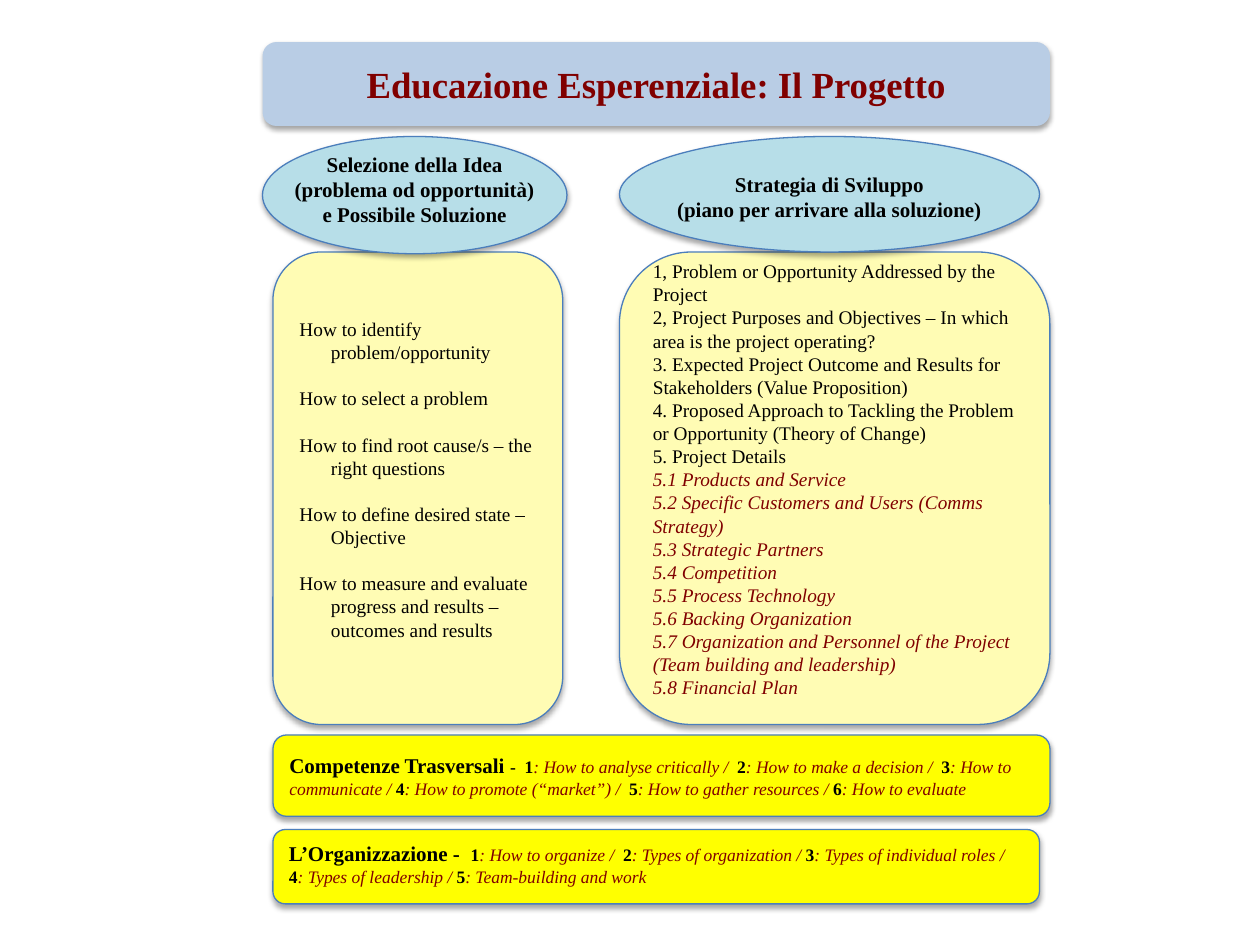
from lxml.etree import SubElement
from pptx import Presentation
from pptx.dml.color import RGBColor
from pptx.enum.shapes import MSO_SHAPE
from pptx.enum.text import MSO_ANCHOR, PP_ALIGN
from pptx.oxml.ns import qn
from pptx.util import Pt

FONT = "Times New Roman"
BLACK = RGBColor(0, 0, 0)
MAROON = RGBColor(0x80, 0, 0)
BLUE = RGBColor(0x4B, 0x7E, 0xBC)
PALE = RGBColor(0xB9, 0xCD, 0xE5)
AQUA = RGBColor(0xB7, 0xDE, 0xE8)
CREAM = RGBColor(0xFF, 0xFC, 0xB4)
YELLOW = RGBColor(0xFF, 0xFF, 0)

# Left edges of the two columns, and the panels' top and height
LEFT, RIGHT = 156, 354
TOP, HIGH = 144, 270

IDEAS = [
    "How to identify problem/opportunity",
    "How to select a problem",
    "How to find root cause/s – the right questions",
    "How to define desired state – Objective",
    "How to measure and evaluate progress and results – outcomes and results",
]
STEPS = [
    "1, Problem or Opportunity Addressed by the Project",
    "2, Project Purposes and Objectives – In which area is the project operating?",
    "3. Expected Project Outcome and Results for Stakeholders (Value Proposition)",
    "4. Proposed Approach to Tackling the Problem or Opportunity (Theory of Change)",
    "5. Project Details",
]
DETAILS = [
    "5.1 Products and Service",
    "5.2 Specific Customers and Users (Comms Strategy)",
    "5.3 Strategic Partners",
    "5.4 Competition",
    "5.5 Process Technology",
    "5.6 Backing Organization",
    "5.7 Organization and Personnel of the Project (Team building and leadership)",
    "5.8 Financial Plan",
]
SKILLS = [
    "How to analyse critically /  ",
    "How to make a decision /  ",
    "How to communicate / ",
    "How to promote (“market”) /  ",
    "How to gather resources / ",
    "How to evaluate",
]
ROLES = [
    "How to organize /  ",
    "Types of organization / ",
    "Types of individual roles / ",
    "Types of leadership / ",
    "Team-building and work",
]


def add_run(para, text, size, color=BLACK, bold=False, italic=False):
    run = para.add_run()
    run.text = text
    font = run.font
    font.name, font.size = FONT, Pt(size)
    font.bold, font.italic = bold, italic
    font.color.rgb = color


def add_para(frame, align=PP_ALIGN.LEFT, lead=None):
    """Return the empty first paragraph, or a new one."""
    para = frame.paragraphs[0]
    if para.runs:
        para = frame.add_paragraph()
    para.alignment = align
    if lead:
        para.line_spacing = Pt(lead)
    return para


def add_shade(shape):
    """Give the shape a soft shadow straight below it."""
    shape.shadow.inherit = False
    effects = shape._element.spPr.find(qn("a:effectLst"))
    shade = SubElement(effects, qn("a:outerShdw"), blurRad=str(Pt(3.1)),
                       dist=str(Pt(1.8)), dir="5400000", rotWithShape="0")
    color = SubElement(shade, qn("a:srgbClr"), val="000000")
    SubElement(color, qn("a:alpha"), val="35000")


def add_box(slide, kind, place, fill, line=BLUE, foot=3.6):
    """Add a filled shape; foot is the bottom inset. Return its text frame."""
    shape = slide.shapes.add_shape(kind, *map(Pt, place))
    shape.fill.solid()
    shape.fill.fore_color.rgb = fill
    if line:
        shape.line.color.rgb = line
        shape.line.width = Pt(0.75)
    else:
        shape.line.fill.background()
    add_shade(shape)
    frame = shape.text_frame
    frame.word_wrap = True
    frame.vertical_anchor = MSO_ANCHOR.MIDDLE
    frame.margin_bottom = Pt(foot)
    return frame


def add_oval(slide, place, lines, drop):
    """Add an ellipse and a label that starts drop points below its top."""
    add_box(slide, MSO_SHAPE.OVAL, place, AQUA)
    x, y, wide, _ = place
    label = slide.shapes.add_textbox(Pt(x), Pt(y + drop), Pt(wide), Pt(51))
    frame = label.text_frame
    frame.word_wrap = True
    for text in lines:
        para = add_para(frame, PP_ALIGN.CENTER, 14.3)
        add_run(para, text, 12, bold=True)


def add_panel(slide, x, wide):
    place = (x, TOP, wide, HIGH)
    return add_box(slide, MSO_SHAPE.ROUNDED_RECTANGLE, place, CREAM, foot=14)


def add_bar(slide, place, head, dash, items, foot=3.6):
    """Add a yellow bar with a heading and numbered items in one line."""
    frame = add_box(slide, MSO_SHAPE.ROUNDED_RECTANGLE, place, YELLOW,
                    foot=foot)
    para = add_para(frame)
    add_run(para, head, 12, bold=True)
    for num, item in enumerate(items, 1):
        mark = dash if num == 1 else ""
        add_run(para, f"{mark}{num}", 10, bold=True)
        add_run(para, f": {item}", 10, MAROON, italic=True)


def main():
    deck = Presentation()
    deck.slide_width, deck.slide_height = Pt(720), Pt(540)
    slide = deck.slides.add_slide(deck.slide_layouts[6])

    # Right panel: project outline
    frame = add_panel(slide, RIGHT, 246)
    for text in STEPS:
        add_run(add_para(frame, lead=13.2), text, 11)
    for text in DETAILS:
        add_run(add_para(frame, lead=13.2), text, 11, MAROON, italic=True)

    # Left panel: questions with hanging indents
    frame = add_panel(slide, LEFT, 165.6)
    for text in IDEAS:
        para = add_para(frame, lead=13.2)
        para._p.get_or_add_pPr().set("marL", str(Pt(18)))
        para._p.get_or_add_pPr().set("indent", str(Pt(-18)))
        if text != IDEAS[-1]:
            para.space_after = Pt(13.2)
        add_run(para, text, 11)

    # Column headings
    add_oval(slide, (150, 78, 174, 67),
             ["Selezione della Idea", "(problema od opportunità)",
              "e Possibile Soluzione"], 5)
    add_oval(slide, (RIGHT, 78, 240, 66),
             ["Strategia di Sviluppo",
              "(piano per arrivare alla soluzione)"], 16.5)

    # Title
    frame = add_box(slide, MSO_SHAPE.ROUNDED_RECTANGLE, (150, 24, 450, 48),
                    PALE, line=None)
    add_run(add_para(frame, PP_ALIGN.CENTER),
            "Educazione Esperenziale: Il Progetto", 21, MAROON, bold=True)

    # Bottom bars
    add_bar(slide, (LEFT, 420, 444, 46.5), "Competenze Trasversali ", "-  ",
            SKILLS)
    add_bar(slide, (LEFT, 474, 438, 42.5), "L’Organizzazione -  ", "",
            ROLES, foot=6.5)

    deck.save("out.pptx")


if __name__ == "__main__":
    main()
